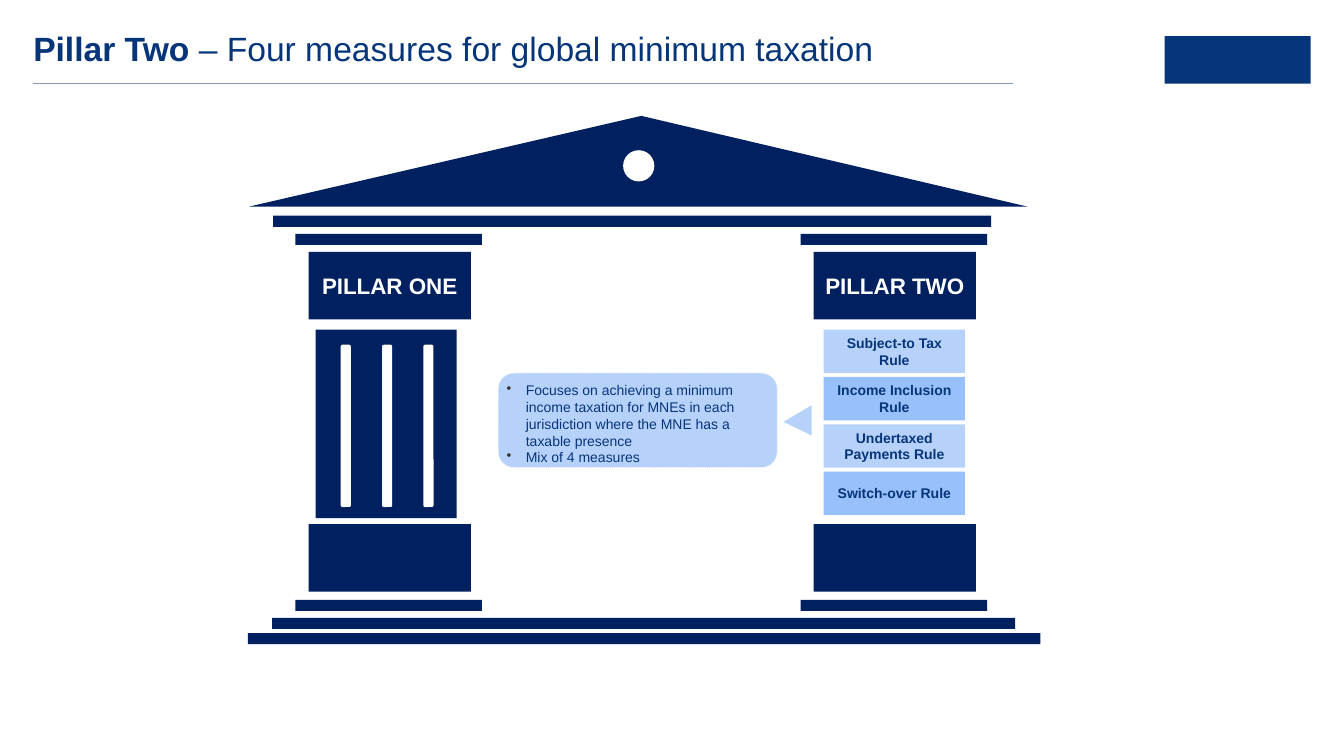
from dataclasses import dataclass

from lxml.etree import SubElement
from pptx import Presentation
from pptx.dml.color import RGBColor
from pptx.enum.dml import MSO_LINE_DASH_STYLE as Dash
from pptx.enum.shapes import MSO_CONNECTOR_TYPE as Connector
from pptx.enum.shapes import MSO_SHAPE as Preset
from pptx.enum.text import MSO_AUTO_SIZE as AutoSize
from pptx.enum.text import MSO_VERTICAL_ANCHOR as Anchor
from pptx.enum.text import PP_PARAGRAPH_ALIGNMENT as Align
from pptx.oxml.ns import qn
from pptx.util import Inches, Pt


@dataclass(frozen=True)
class Theme:
    font: str = "Arial"
    stone: str = "002060"
    ink: str = "06357A"
    pale: str = "B6D2FB"
    sky: str = "98C0FA"
    white: str = "FFFFFF"
    rule: str = "829ABC"
    bullet: str = "333333"
    title_size: int = 24
    pillar_size: int = 16
    body_size: int = 10


THEME = Theme()
STEP_HEIGHT = 0.11
MEASURES = [
    "Subject-to Tax Rule",
    "Income Inclusion Rule",
    "Undertaxed Payments Rule",
    "Switch-over Rule",
]
FOCUS_POINTS = [
    "Focuses on achieving a minimum income taxation for MNEs in each "
    "jurisdiction where the MNE has a taxable presence",
    "Mix of 4 measures",
]


def color(value):
    return RGBColor.from_string(value)


def format_span(span, size, ink, bold=False):
    span.font.name = THEME.font
    span.font.size = Pt(size)
    span.font.bold = bold
    span.font.color.rgb = color(ink)


def set_insets(frame, inset):
    frame.margin_left = frame.margin_right = Inches(inset)
    frame.margin_top = frame.margin_bottom = Inches(inset)


def add_block(page, preset, left, top, width, height, fill=THEME.stone):
    block = page.shapes.add_shape(
        preset, Inches(left), Inches(top), Inches(width), Inches(height)
    )
    block.shadow.inherit = False
    block.fill.solid()
    block.fill.fore_color.rgb = color(fill)
    block.line.fill.background()
    return block


def add_step(page, left, top, width):
    add_block(page, Preset.RECTANGLE, left, top, width, STEP_HEIGHT)


def add_label(block, text, size, ink):
    frame = block.text_frame
    frame.text = text
    frame.word_wrap = True
    frame.vertical_anchor = Anchor.MIDDLE
    set_insets(frame, 0.08)
    para = frame.paragraphs[0]
    para.alignment = Align.CENTER
    format_span(para.runs[0], size, ink, bold=True)


def add_bullet(para):
    properties = para._p.get_or_add_pPr()
    properties.set("marL", str(Inches(0.19)))
    properties.set("indent", str(-Inches(0.19)))
    bullet_color = SubElement(properties, qn("a:buClr"))
    SubElement(bullet_color, qn("a:srgbClr"), val=THEME.bullet)
    SubElement(properties, qn("a:buChar"), char="•")


def add_header(page):
    title = page.shapes.title
    title.left, title.top = Inches(0.33), Inches(0.32)
    title.width, title.height = Inches(9.72), Inches(0.36)
    frame = title.text_frame
    frame.auto_size = AutoSize.NONE
    frame.word_wrap = True
    frame.vertical_anchor = Anchor.TOP
    set_insets(frame, 0)
    para = frame.paragraphs[0]
    para.alignment = Align.LEFT
    para.line_spacing = 0.9
    for text, bold in [
        ("Pillar Two ", True),
        ("– Four measures for global minimum taxation", False),
    ]:
        span = para.add_run()
        span.text = text
        format_span(span, THEME.title_size, THEME.ink, bold)

    rule = page.shapes.add_connector(
        Connector.STRAIGHT, Inches(0.33), Inches(0.83), Inches(10.05), Inches(0.83)
    )
    rule.line.color.rgb = color(THEME.rule)
    rule.line.width = Pt(1)
    SubElement(rule._element.spPr, qn("a:effectLst"))
    add_block(page, Preset.RECTANGLE, 11.55, 0.36, 1.45, 0.47, THEME.ink)


def add_roof(page):
    roof = add_block(page, Preset.ISOSCELES_TRIANGLE, 2.47, 1.15, 7.72, 0.9)
    roof.adjustments[0] = 0.504
    add_block(page, Preset.OVAL, 6.18, 1.49, 0.31, 0.31, THEME.white)
    add_step(page, 2.71, 2.14, 7.12)


def add_pillar(page, left, name):
    for top in (2.32, 5.95):
        add_step(page, left, top, 1.85)
    capital, base = [
        add_block(page, Preset.RECTANGLE, left + 0.13, top, 1.61, 0.67)
        for top in (2.5, 5.2)
    ]
    add_label(capital, name, THEME.pillar_size, THEME.white)


def add_fluted_shaft(page):
    add_block(page, Preset.RECTANGLE, 3.13, 3.27, 1.4, 1.87)
    for index in range(3):
        left = 3.38 + 0.41 * index
        add_block(page, Preset.ROUNDED_RECTANGLE, left, 3.42, 0.1, 1.61, THEME.white)


def add_measures(page):
    for index, measure in enumerate(MEASURES):
        fill = (THEME.pale, THEME.sky)[index % 2]
        top = 3.27 + 0.47 * index
        block = add_block(page, Preset.RECTANGLE, 8.17, top, 1.4, 0.43, fill)
        add_label(block, measure, THEME.body_size, THEME.ink)


def add_callout(page):
    callout = add_block(
        page, Preset.ROUNDED_RECTANGLE, 4.94, 3.7, 2.77, 0.94, THEME.pale
    )
    callout.line.color.rgb = color(THEME.white)
    callout.line.width = Pt(0.75)
    callout.line.dash_style = Dash.ROUND_DOT
    frame = callout.text_frame
    frame.text = "\n".join(FOCUS_POINTS)
    frame.word_wrap = True
    frame.vertical_anchor = Anchor.TOP
    set_insets(frame, 0.04)
    for para in frame.paragraphs:
        para.alignment = Align.LEFT
        add_bullet(para)
        format_span(para.runs[0], THEME.body_size, THEME.ink)

    pointer = add_block(
        page, Preset.ISOSCELES_TRIANGLE, 7.76, 4.03, 0.3, 0.28, THEME.pale
    )
    pointer.adjustments[0] = 0.45
    pointer.rotation = 270


def main():
    deck = Presentation()
    deck.slide_width, deck.slide_height = Inches(13.33), Inches(7.5)
    page = deck.slides.add_slide(deck.slide_layouts[5])
    add_header(page)
    add_callout(page)
    add_roof(page)
    add_pillar(page, 2.93, "PILLAR ONE")
    add_pillar(page, 7.94, "PILLAR TWO")
    add_step(page, 2.7, 6.13, 7.37)
    add_step(page, 2.46, 6.28, 7.86)
    add_fluted_shaft(page)
    add_measures(page)
    deck.save("out.pptx")


if __name__ == "__main__":
    main()
